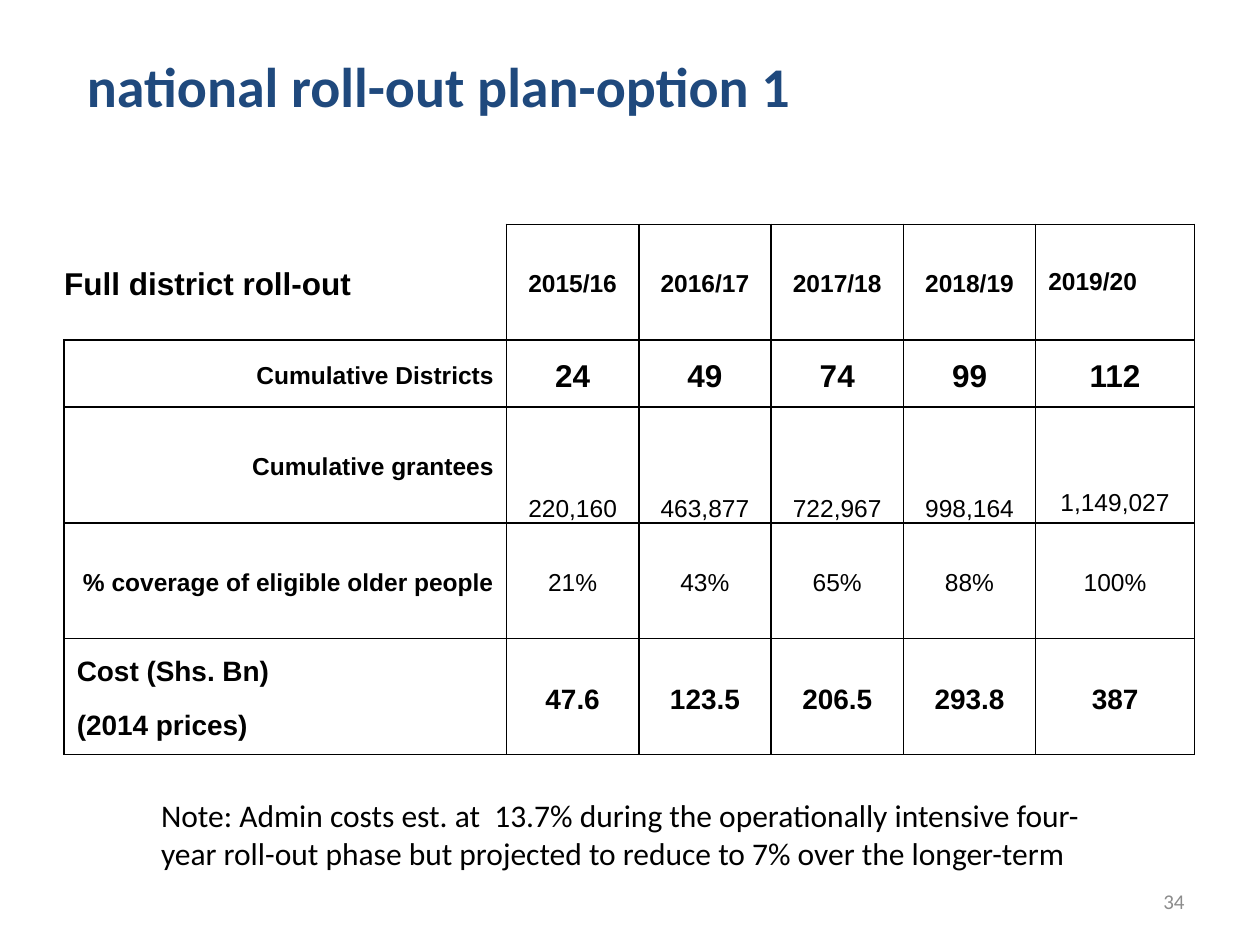
from dataclasses import dataclass

from lxml import etree
from pptx import Presentation
from pptx import util as u
from pptx.dml.color import RGBColor
from pptx.enum import text
from pptx.oxml import ns


@dataclass(frozen=True)
class Theme:
    """Colours, fonts and type sizes of the slide."""
    title: str = "1F497D"
    ink: str = "000000"
    muted: str = "8C8C8C"
    sans: str = "Calibri"
    grid: str = "Arial"
    sz_title: int = 32
    sz_large: int = 18
    sz_cost: int = 16
    sz_cell: int = 14
    sz_number: int = 12


T = Theme()
LEFT, CENTER, RIGHT = text.PP_ALIGN.LEFT, text.PP_ALIGN.CENTER, text.PP_ALIGN.RIGHT
MIDDLE, BOTTOM = text.MSO_ANCHOR.MIDDLE, text.MSO_ANCHOR.BOTTOM
COLS = [3.51, 1.05, 1.05, 1.05, 1.05, 1.26]
ROWS = [0.92, 0.53, 0.92, 0.92, 0.92]
CELLS = [
    ["Full district roll-out", "2015/16", "2016/17", "2017/18", "2018/19", "2019/20"],
    ["Cumulative Districts", "24", "49", "74", "99", "112"],
    ["Cumulative grantees", "220,160", "463,877", "722,967", "998,164", "1,149,027"],
    ["% coverage of eligible older people", "21%", "43%", "65%", "88%", "100%"],
    ["Cost (Shs. Bn)\n(2014 prices)", "47.6", "123.5", "206.5", "293.8", "387"],
]
SPACED = {"line_spacing": 1.15, "space_after": u.Pt(10)}
ROW_FONTS = [
    {"size": u.Pt(T.sz_cell), "bold": True},
    {"size": u.Pt(T.sz_large), "bold": True},
    {"size": u.Pt(T.sz_cell), "bold": False},
    {"size": u.Pt(T.sz_cell), "bold": False},
    {"size": u.Pt(T.sz_cost), "bold": True},
]
LABEL_SIZES = [T.sz_large, T.sz_cell, T.sz_cell, T.sz_cell, T.sz_cost]


def apply(obj, values):
    """Set each attribute named in a dict of format values."""
    for name, value in values.items():
        setattr(obj, name, value)


def write(tf, words, font, color, para):
    """Write one paragraph per line with the given formats."""
    tf.text = words
    for p in tf.paragraphs:
        apply(p, para)
        for r in p.runs:
            apply(r.font, font)
            r.font.color.rgb = RGBColor.from_string(color)


def margins(obj, left, top, right, bottom):
    """Set the four insets of a cell, in inches."""
    apply(obj, {"margin_left": u.Inches(left), "margin_top": u.Inches(top),
                "margin_right": u.Inches(right), "margin_bottom": u.Inches(bottom)})


def add_title(s, words):
    """Place and format the title placeholder."""
    sp = s.shapes.title
    apply(sp, {"left": u.Inches(0.59), "top": u.Inches(0.36),
               "width": u.Inches(9.17), "height": u.Inches(6.43)})
    apply(sp.text_frame, {"vertical_anchor": text.MSO_ANCHOR.TOP, "word_wrap": True,
                          "auto_size": text.MSO_AUTO_SIZE.NONE})
    write(sp.text_frame, words, {"name": T.sans, "size": u.Pt(T.sz_title), "bold": True},
          T.title, {"alignment": LEFT})


def add_text(s, box, words, size, color, frame, para):
    """Add a wrapped text box."""
    tf = s.shapes.add_textbox(*map(u.Inches, box)).text_frame
    apply(tf, {"word_wrap": True, **frame})
    write(tf, words, {"name": T.sans, "size": u.Pt(size)}, color, para)


def add_borders(cell, hidden=()):
    """Draw one-point cell borders, leaving out the hidden sides."""
    tcPr = cell._tc.get_or_add_tcPr()
    for side in "LRTB":
        ln = etree.SubElement(tcPr, ns.qn(f"a:ln{side}"), w=str(u.Pt(1)))
        if side in hidden:
            etree.SubElement(ln, ns.qn("a:noFill"))
        else:
            fill = etree.SubElement(ln, ns.qn("a:solidFill"))
            etree.SubElement(fill, ns.qn("a:srgbClr"), val=T.ink)


def format_cell(cell, row, col, words):
    """Write one cell by the rules of its row and column."""
    corner, last = (row, col) == (0, 0), col == len(COLS) - 1
    font = {"name": T.grid, **ROW_FONTS[row]}
    para = {"alignment": CENTER, **SPACED}
    if col == 0:
        font.update(size=u.Pt(LABEL_SIZES[row]), bold=True)
        para["alignment"] = LEFT if row in (0, 4) else RIGHT
    elif row == 0 and last:
        para = {"alignment": LEFT}
    if corner:
        margins(cell, 0, 0, 0, 0)
    elif row and col and not (last and row in (2, 3)):
        margins(cell, 0.01, 0.01, 0.01, 0)
    cell.vertical_anchor = BOTTOM if row == 2 and col else MIDDLE
    write(cell.text_frame, words, font, T.ink, para)
    add_borders(cell, "LT" if corner else "")
    cell.fill.background()


def add_plan(s):
    """Add the roll-out table."""
    box = map(u.Inches, (0.51, 1.78, sum(COLS), sum(ROWS)))
    table = s.shapes.add_table(len(ROWS), len(COLS), *box).table
    apply(table, {"first_row": False, "horz_banding": False})
    for column, width in zip(table.columns, COLS):
        column.width = u.Inches(width)
    for i, (row, height) in enumerate(zip(table.rows, ROWS)):
        row.height = u.Inches(height)
        for j, words in enumerate(CELLS[i]):
            format_cell(table.cell(i, j), i, j, words)


def main():
    """Build the slide and save it."""
    prs = Presentation()
    prs.slide_width, prs.slide_height = u.Inches(10), u.Inches(7.5)
    s = prs.slides.add_slide(prs.slide_layouts[5])
    add_title(s, "national roll-out plan-option 1")
    add_text(s, (7.17, 6.95, 2.33, 0.4), "34", T.sz_number, T.muted,
             {"vertical_anchor": MIDDLE}, {"alignment": RIGHT})
    add_plan(s)
    add_text(s, (1.18, 6.27, 7.56, 0.71),
             "Note: Admin costs est. at  13.7% during the operationally intensive four-year "
             "roll-out phase but projected to reduce to 7% over the longer-term",
             T.sz_large, T.ink, {"auto_size": text.MSO_AUTO_SIZE.SHAPE_TO_FIT_TEXT},
             {"alignment": LEFT})
    prs.save("out.pptx")


if __name__ == "__main__":
    main()
